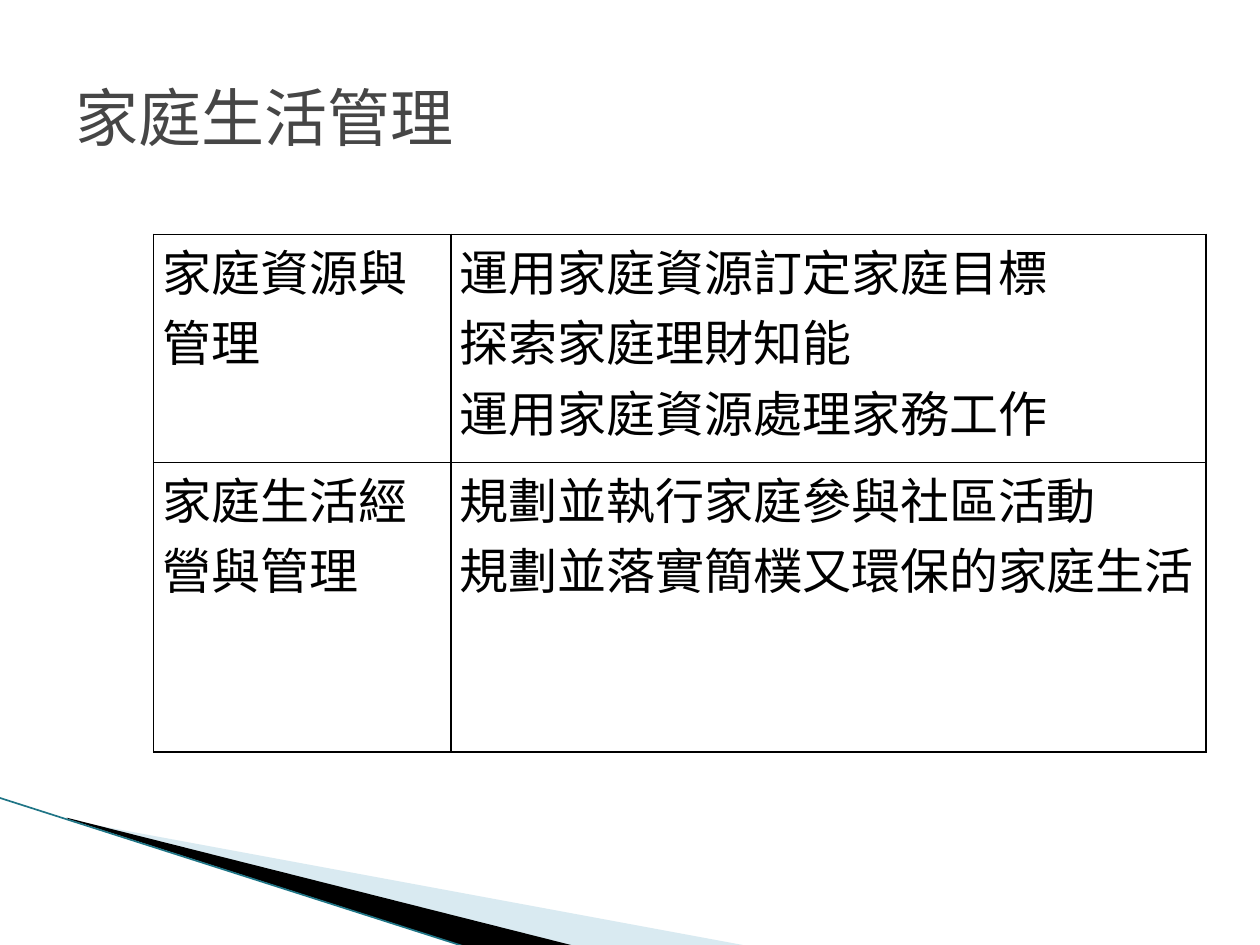
from pptx import Presentation
from pptx.dml.color import RGBColor
from pptx.enum.shapes import MSO_CONNECTOR
from pptx.enum.text import MSO_ANCHOR, PP_ALIGN
from pptx.oxml import parse_xml
from pptx.oxml.ns import nsdecls, qn
from pptx.util import Inches, Pt
from lxml.etree import SubElement

# Content
TITLE = "家庭生活管理"
TOPICS = [
    ("家庭資源與管理",
     ["運用家庭資源訂定家庭目標", "探索家庭理財知能", "運用家庭資源處理家務工作"]),
    ("家庭生活經營與管理",
     ["規劃並執行家庭參與社區活動", "規劃並落實簡樸又環保的家庭生活"]),
]
COLUMN_WIDTHS = [2.36, 5.99]
ROW_HEIGHTS = [1.81, 2.3]

THEME = {
    "title": "464646", "text": "000000", "border": "000000", "edge": "1F7586",
    "title_size": 36, "text_size": 28,
    "latin": "Calibri", "cjk": "Noto Sans CJK TC",
}
# Corner wedges: outline, colour, opacity in percent
WEDGES = [
    ([(0.55, 6.51), (5.95, 7.51), (4.56, 7.51), (0.55, 6.5)], "A0CBDC", 40),
    ([(0.53, 6.49), (4.57, 7.51), (3.72, 7.52), (0.54, 6.5)], "000000", 100),
]
EDGE = (-0.01, 6.33, 3.71, 7.52)


def color(name):
    return RGBColor.from_string(THEME[name])


def add_run(paragraph, words, latin, size, tone):
    run = paragraph.add_run()
    run.text = words
    run.font.name = latin
    run.font.size = Pt(size)
    run.font.color.rgb = color(tone)
    SubElement(run.font._element, qn("a:ea")).set("typeface", THEME["cjk"])


def add_wedge(slide, outline, fill, opacity):
    points = [(Inches(x), Inches(y)) for x, y in outline]
    builder = slide.shapes.build_freeform(*points[0])
    builder.add_line_segments(points[1:], close=True)
    wedge = builder.convert_to_shape()
    wedge.shadow.inherit = False
    wedge.line.fill.background()
    wedge.fill.solid()
    wedge.fill.fore_color.rgb = RGBColor.from_string(fill)
    if opacity < 100:
        tint = wedge._element.spPr.find(".//" + qn("a:srgbClr"))
        SubElement(tint, qn("a:alpha")).set("val", str(opacity * 1000))


def fill_cell(cell, lines):
    cell.margin_left = cell.margin_right = Inches(0.07)
    cell.margin_top = cell.margin_bottom = 0
    cell.vertical_anchor = MSO_ANCHOR.TOP
    properties = cell._tc.get_or_add_tcPr()
    for side in ("lnL", "lnR", "lnT", "lnB"):
        properties.append(parse_xml(
            f'<a:{side} {nsdecls("a")} w="{Pt(1)}"><a:solidFill>'
            f'<a:srgbClr val="{THEME["border"]}"/></a:solidFill></a:{side}>'))
    cell.fill.background()
    frame = cell.text_frame
    for i, line in enumerate(lines):
        paragraph = frame.add_paragraph() if i else frame.paragraphs[0]
        add_run(paragraph, line, THEME["latin"], THEME["text_size"], "text")


def main():
    prs = Presentation()
    prs.slide_width, prs.slide_height = Inches(10), Inches(7.5)
    slide = prs.slides.add_slide(prs.slide_layouts[5])

    # Corner decoration
    for wedge in WEDGES:
        add_wedge(slide, *wedge)
    edge = slide.shapes.add_connector(
        MSO_CONNECTOR.STRAIGHT, *(Inches(value) for value in EDGE))
    edge.line.color.rgb = color("edge")
    edge.line.width = Pt(0.95)
    SubElement(edge._element.spPr, qn("a:effectLst"))

    # Title
    title = slide.shapes.title
    title.left, title.top = Inches(0.5), Inches(0.3)
    title.width, title.height = Inches(9), Inches(1.25)
    title.text_frame.vertical_anchor = MSO_ANCHOR.MIDDLE
    heading = title.text_frame.paragraphs[0]
    heading.alignment = PP_ALIGN.LEFT
    add_run(heading, TITLE, THEME["cjk"], THEME["title_size"], "title")

    # Topics and their learning content
    table = slide.shapes.add_table(
        len(TOPICS), len(COLUMN_WIDTHS), Inches(1.22), Inches(1.86),
        Inches(sum(COLUMN_WIDTHS)), Inches(sum(ROW_HEIGHTS))).table
    table.first_row = table.horz_banding = False
    for column, width in zip(table.columns, COLUMN_WIDTHS):
        column.width = Inches(width)
    for row, height, (topic, lessons) in zip(table.rows, ROW_HEIGHTS, TOPICS):
        row.height = Inches(height)
        fill_cell(row.cells[0], [topic])
        fill_cell(row.cells[1], lessons)

    prs.save("out.pptx")


if __name__ == "__main__":
    main()
